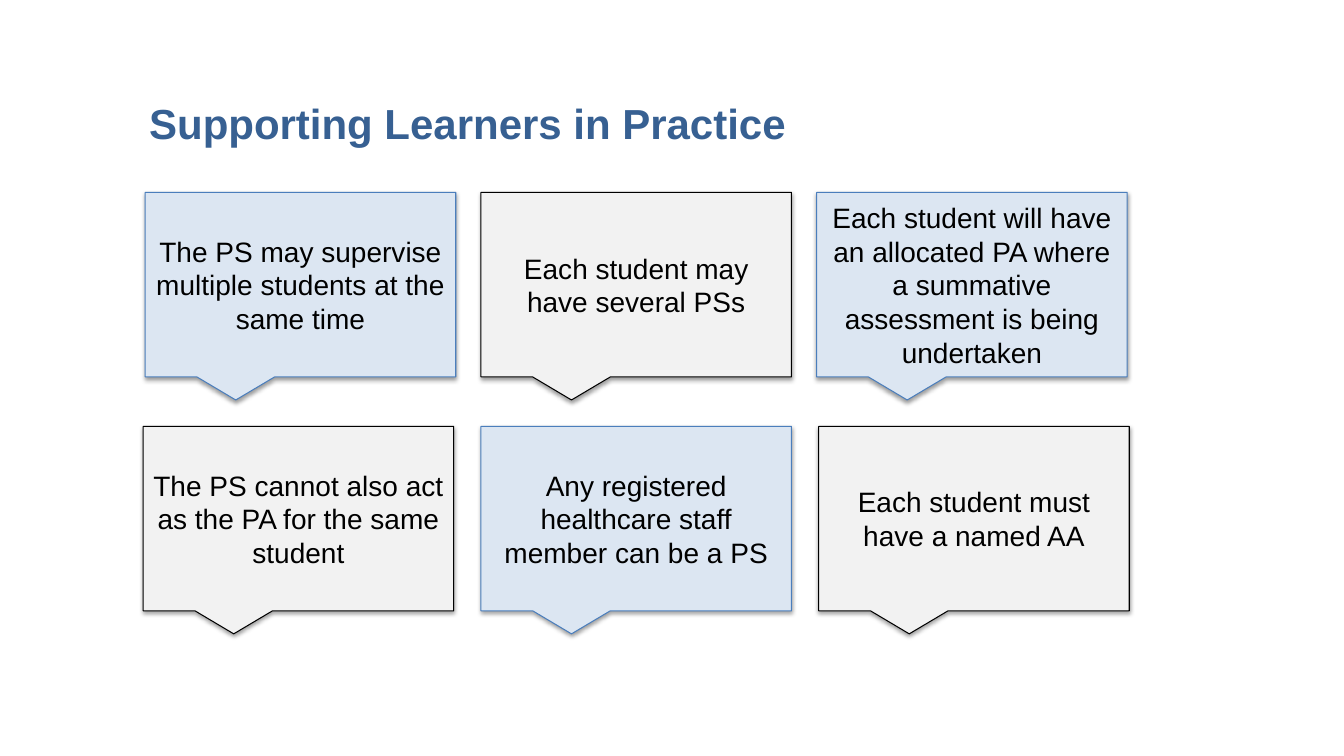
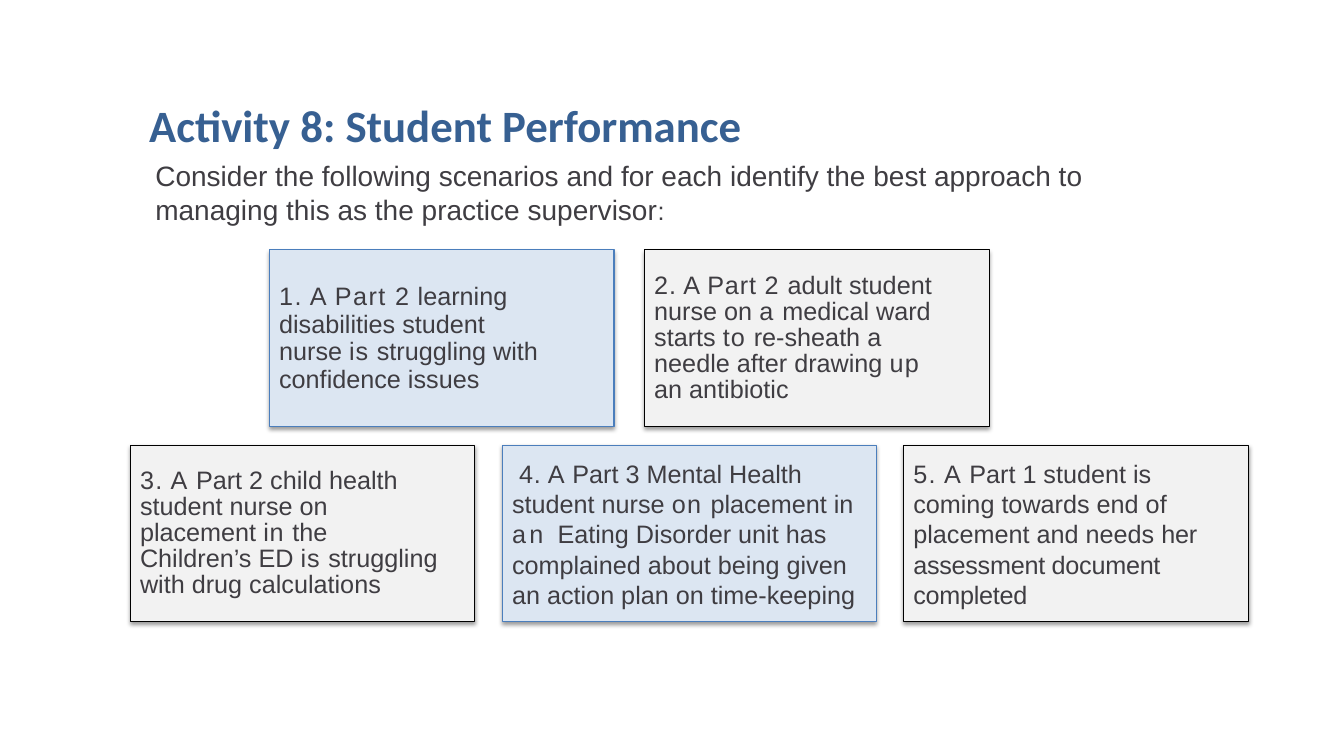
from lxml import etree
from pptx import Presentation
from pptx.dml.color import RGBColor
from pptx.enum.shapes import MSO_SHAPE as Shape
from pptx.enum.text import MSO_ANCHOR as Anchor, MSO_AUTO_SIZE as AutoSize, PP_ALIGN as Align
from pptx.oxml.ns import qn
from pptx.util import Inches, Pt

COLORS = {
    "title": "376092", "black": "000000", "body": "3F3D42",
    "blue": "DCE6F2", "blue_line": "4B7EBC", "grey": "F2F2F2",
}
TONES = {"blue": ("blue", "blue_line"), "grey": ("grey", "black")}


def color(name):
    return RGBColor.from_string(COLORS[name])


def add_soft_shadow(shape):
    """Give the shape a faint shadow that falls straight down."""
    shape.shadow.inherit = False
    effects = shape._element.spPr.find(qn("a:effectLst"))
    outer = etree.SubElement(effects, qn("a:outerShdw"), blurRad=str(Pt(3.1)),
                             dist=str(Pt(1.6)), dir="5400000", rotWithShape="0")
    tint = etree.SubElement(outer, qn("a:srgbClr"), val=COLORS["black"])
    etree.SubElement(tint, qn("a:alpha"), val="38000")


class Deck:
    font = "Arial"

    def __init__(self):
        self.presentation = Presentation()
        self.presentation.slide_width = Inches(13.33)
        self.presentation.slide_height = Inches(7.5)
        self.slide = None

    def format_run(self, run, size, tone, font=None, bold=False):
        run.font.name = font or self.font
        run.font.size = Pt(size)
        run.font.bold = bold
        run.font.color.rgb = color(tone)

    def add_slide(self, title, size, font=None):
        layout = self.presentation.slide_layouts[5]
        self.slide = self.presentation.slides.add_slide(layout)
        shape = self.slide.shapes.title
        shape.left, shape.top = Inches(1.48), Inches(0.97)
        shape.width, shape.height = Inches(11.42), Inches(0.5)
        frame = shape.text_frame
        frame.text = title
        frame.margin_left = frame.margin_right = 0
        frame.margin_top = frame.margin_bottom = 0
        frame.vertical_anchor = Anchor.TOP
        frame.auto_size = AutoSize.SHAPE_TO_FIT_TEXT
        frame.paragraphs[0].alignment = Align.LEFT
        self.format_run(frame.paragraphs[0].runs[0], size, "title", font, True)

    def add_panel(self, kind, left, top, width, height, tone):
        shape = self.slide.shapes.add_shape(
            kind, Inches(left), Inches(top), Inches(width), Inches(height))
        fill, line = TONES[tone]
        shape.fill.solid()
        shape.fill.fore_color.rgb = color(fill)
        shape.line.color.rgb = color(line)
        shape.line.width = Pt(0.75)
        add_soft_shadow(shape)
        shape.text_frame.word_wrap = True
        shape.text_frame.vertical_anchor = Anchor.MIDDLE
        return shape

    def add_callout(self, left, top, text, tone):
        shape = self.add_panel(Shape.RECTANGULAR_CALLOUT, left, top, 3.08, 1.83, tone)
        shape.text_frame.text = text
        paragraph = shape.text_frame.paragraphs[0]
        paragraph.alignment = Align.CENTER
        self.format_run(paragraph.runs[0], 20, "black")

    def add_scenario(self, left, top, width, runs, tone, line_height, right_inset, indent):
        """Runs are pairs of text and letter spacing in points."""
        shape = self.add_panel(Shape.RECTANGLE, left, top, width, 1.75, tone)
        shape.text_frame.margin_right = Inches(right_inset)
        paragraph = shape.text_frame.paragraphs[0]
        paragraph.alignment = Align.LEFT
        paragraph._p.get_or_add_pPr().set("indent", str(Inches(indent)))
        if line_height:
            paragraph.line_spacing = Pt(line_height)
        for text, spacing in runs:
            run = paragraph.add_run()
            run.text = text
            self.format_run(run, 18, "body")
            if spacing:
                run._r.get_or_add_rPr().set("spc", str(round(spacing * 100)))

    def add_intro(self, text, ending):
        box = self.slide.shapes.add_textbox(
            Inches(1.42), Inches(1.51), Inches(10.25), Inches(0.79))
        frame = box.text_frame
        frame.word_wrap = True
        frame.vertical_anchor = Anchor.MIDDLE
        frame.margin_left = Inches(0.12)
        frame.margin_right = Inches(0.9)
        for part, size in ((text, 20), (ending, 18)):
            run = frame.paragraphs[0].add_run()
            run.text = part
            self.format_run(run, size, "body")


# Each row: left of the first callout, top, distance between lefts, callouts
CALLOUT_ROWS = [
    (1.44, 1.91, 3.33, [
        ("The PS may supervise multiple students at the same time", "blue"),
        ("Each student may have several PSs", "grey"),
        ("Each student will have an allocated PA where a summative "
         "assessment is being undertaken", "blue"),
    ]),
    (1.42, 4.23, 3.35, [
        ("The PS cannot also act as the PA for the same student", "grey"),
        ("Any registered healthcare staff member can be a PS", "blue"),
        ("Each student must have a named AA", "grey"),
    ]),
]

# Each row: left, top, gap, scenarios (width, tone, line height, right inset, indent, runs)
SCENARIO_ROWS = [
    (2.67, 2.48, 0.3, [
        (3.42, "blue", 19.6, 0.6, 0, [
            ("1. A Part 2", 1), (" learning disabilities student nurse ", 0),
            ("is ", 0.6), ("struggling with confidence issues", 0)]),
        (3.42, "grey", 18.6, 0.4, 0, [
            ("2. A Part 2 ", 0.6), ("adult student nurse on ", 0), ("a ", 0.7),
            ("medical ward starts ", 0), ("to ", 0.7),
            ("re-sheath a needle after drawing ", 0), ("up ", 0.9),
            ("an antibiotic", 0)]),
    ]),
    (1.29, 4.42, 0.27, [
        (3.42, "grey", 18.6, 0.3, 0, [
            ("3. A ", 1), ("Part 2 child health student nurse on placement ", 0),
            ("in ", 0.6), ("the Children’s ED ", 0), ("is ", 0.6),
            ("struggling with drug calculations", 0)]),
        (3.71, "blue", None, 0.1, 0.07, [
            ("4. A", 0.5), (" Part 3 Mental Health student nurse ", 0),
            ("on ", 0.9), ("placement in", 0), (" an ", 2.5),
            ("Eating Disorder unit has complained about being given "
             "an action plan on time-keeping", 0)]),
        (3.42, "grey", None, 0.3, 0, [
            ("5. A ", 1),
            ("Part 1 student is coming towards end of placement and needs ", 0),
            ("her assessment document completed", -0.2)]),
    ]),
]


def main():
    deck = Deck()

    deck.add_slide("Supporting Learners in Practice", 30)
    for first_left, top, pitch, callouts in CALLOUT_ROWS:
        for column, (text, tone) in enumerate(callouts):
            deck.add_callout(first_left + column * pitch, top, text, tone)

    deck.add_slide("Activity 8: Student Performance", 32, "Calibri")
    deck.add_intro("Consider the following scenarios and for each identify the best "
                   "approach to managing this as the practice supervisor", ":")
    for left, top, gap, scenarios in SCENARIO_ROWS:
        for width, tone, line_height, right_inset, indent, runs in scenarios:
            deck.add_scenario(left, top, width, runs, tone, line_height, right_inset, indent)
            left += width + gap

    deck.presentation.save("out.pptx")


if __name__ == "__main__":
    main()
